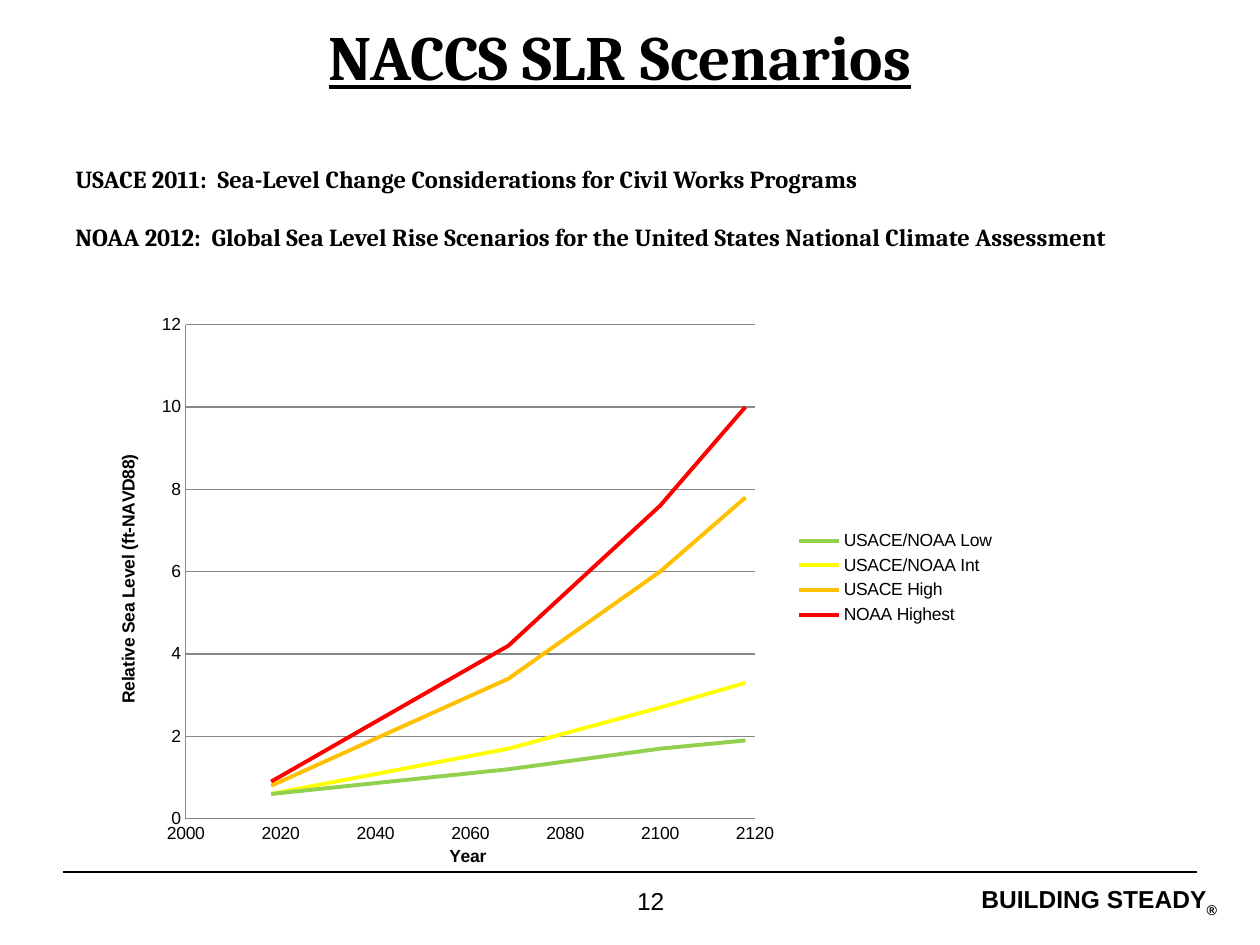
from dataclasses import dataclass

from lxml.etree import SubElement
from pptx import Presentation
from pptx.chart.axis import ValueAxis
from pptx.chart.chart import Chart
from pptx.chart.data import XyChartData
from pptx.dml.color import RGBColor
from pptx.enum.chart import XL_CHART_TYPE, XL_LEGEND_POSITION, XL_TICK_MARK
from pptx.enum.shapes import MSO_CONNECTOR
from pptx.enum.text import MSO_ANCHOR, PP_ALIGN
from pptx.oxml import parse_xml
from pptx.oxml.ns import nsdecls, qn
from pptx.slide import Slide
from pptx.util import Emu, Pt

SCALE = 9144  # EMU in one px, 100 px to the inch

BLACK = RGBColor(0, 0, 0)
GRAY = RGBColor(0x87, 0x87, 0x87)
GREEN = RGBColor(0x92, 0xD0, 0x50)
YELLOW = RGBColor(0xFF, 0xFF, 0)
AMBER = RGBColor(0xFF, 0xC0, 0)
RED = RGBColor(0xFF, 0, 0)

YEARS = (2018, 2068, 2100, 2118)


@dataclass(frozen=True)
class Run:
    text: str
    bold: bool = True
    line: bool = False
    base: int = 0


@dataclass(frozen=True)
class Block:
    box: tuple[int, int, int, int]
    paras: tuple[tuple[Run, ...], ...]
    font: str
    size: int = 14
    align: PP_ALIGN = PP_ALIGN.LEFT
    anchor: MSO_ANCHOR = MSO_ANCHOR.TOP
    inset: bool = True
    gap: float = 0


@dataclass(frozen=True)
class Curve:
    name: str
    color: RGBColor
    levels: tuple[float, ...]


BLOCKS = (
    Block((681, 702, 285, 23),
          ((Run("BUILDING STEADY"), Run("®", base=-25000)),),
          "Arial", align=PP_ALIGN.RIGHT, inset=False),
    Block((42, 0, 900, 88), ((Run("NACCS SLR Scenarios", line=True),),),
          "Cambria", 36, PP_ALIGN.CENTER, MSO_ANCHOR.MIDDLE),
    Block((50, 125, 925, 104), (
        (Run("USACE 2011:  Sea-Level Change Considerations for Civil Works Programs"),),
        (Run("NOAA 2012:  Global Sea Level Rise Scenarios for the United States "
             "National Climate Assessment"),),
    ), "Cambria", gap=16.5),
    Block((400, 698, 233, 52), ((Run("12", bold=False),),),
          "Arial", align=PP_ALIGN.CENTER),
)

CURVES = (
    Curve("USACE/NOAA Low", GREEN, (0.6, 1.2, 1.7, 1.9)),
    Curve("USACE/NOAA Int", YELLOW, (0.6, 1.7, 2.7, 3.3)),
    Curve("USACE High", AMBER, (0.8, 3.4, 6, 7.8)),
    Curve("NOAA Highest", RED, (0.9, 4.2, 7.6, 10)),
)


def px(*vals: int) -> list[Emu]:
    return [Emu(val * SCALE) for val in vals]


def add_block(slide: Slide, block: Block) -> None:
    frame = slide.shapes.add_textbox(*px(*block.box)).text_frame
    frame.word_wrap = True
    frame.vertical_anchor = block.anchor
    if not block.inset:
        frame.margin_left = frame.margin_right = 0
        frame.margin_top = frame.margin_bottom = 0
    for idx, runs in enumerate(block.paras):
        para = frame.add_paragraph() if idx else frame.paragraphs[0]
        para.alignment = block.align
        if idx:
            para.space_before = Pt(block.gap)
        for item in runs:
            run = para.add_run()
            run.text = item.text
            font = run.font
            font.name, font.size = block.font, Pt(block.size)
            font.bold, font.underline = item.bold, item.line
            font.color.rgb = BLACK
            if item.base:
                run._r.get_or_add_rPr().set("baseline", str(item.base))


def add_rule(slide: Slide) -> None:
    rule = slide.shapes.add_connector(
        MSO_CONNECTOR.STRAIGHT, *px(950, 692, 50, 692))
    rule.line.color.rgb = BLACK
    rule.line.width = Pt(0.75)
    SubElement(rule._element.spPr, qn("a:effectLst"))


def style_axis(axis: ValueAxis, title: str, low: int, high: int,
               step: int, grid: bool) -> None:
    axis.minimum_scale, axis.maximum_scale = low, high
    axis.major_unit = step
    axis.major_tick_mark = axis.minor_tick_mark = XL_TICK_MARK.NONE
    axis.format.line.color.rgb = GRAY
    axis.has_major_gridlines = grid
    if grid:
        axis.major_gridlines.format.line.color.rgb = GRAY
    labels = axis.tick_labels
    labels.number_format, labels.number_format_is_linked = "General", False
    run = axis.axis_title.text_frame.paragraphs[0].add_run()
    run.text = title
    run.font.name, run.font.size, run.font.bold = "Arial", Pt(10), True
    run.font.color.rgb = BLACK


def place_plot(chart: Chart, left: float, top: float,
               width: float, height: float) -> None:
    """Fix the inner plot area, in shares of the chart."""
    area = chart._chartSpace.chart.plotArea
    for old in area.findall(qn("c:layout")):
        area.remove(old)
    sides = "".join(
        f'<c:{tag} val="{val}"/>' for tag, val in
        (("x", left), ("y", top), ("w", width), ("h", height)))
    area.insert(0, parse_xml(
        f'<c:layout {nsdecls("c")}><c:manualLayout>'
        '<c:layoutTarget val="inner"/><c:xMode val="edge"/>'
        f'<c:yMode val="edge"/>{sides}</c:manualLayout></c:layout>'))


def add_curves(slide: Slide) -> None:
    data = XyChartData()
    for curve in CURVES:
        series = data.add_series(curve.name)
        for year, level in zip(YEARS, curve.levels):
            series.add_data_point(year, level)
    chart = slide.shapes.add_chart(
        XL_CHART_TYPE.XY_SCATTER_SMOOTH_NO_MARKERS,
        *px(83, 225, 717, 467), data).chart
    chart.has_title = False
    chart.font.name, chart.font.size = "Arial", Pt(10)
    chart.font.color.rgb = BLACK
    chart.has_legend = True
    chart.legend.position = XL_LEGEND_POSITION.RIGHT
    chart.legend.include_in_layout = False
    plot = chart.plots[0]
    plot.vary_by_categories = False
    for series, curve in zip(plot.series, CURVES):
        series.smooth = True
        series.format.line.color.rgb = curve.color
        series.format.line.width = Pt(2.25)
    style_axis(chart.category_axis, "Year", 2000, 2120, 20, False)
    style_axis(chart.value_axis, "Relative Sea Level (ft-NAVD88)", 0, 12, 2, True)
    place_plot(chart, 0.09, 0.07, 0.63, 0.84)


def main() -> None:
    deck = Presentation()
    deck.slide_width, deck.slide_height = px(1000, 750)
    slide = deck.slides.add_slide(deck.slide_layouts[6])
    add_rule(slide)
    add_curves(slide)
    for block in BLOCKS:
        add_block(slide, block)
    deck.save("out.pptx")


if __name__ == "__main__":
    main()
